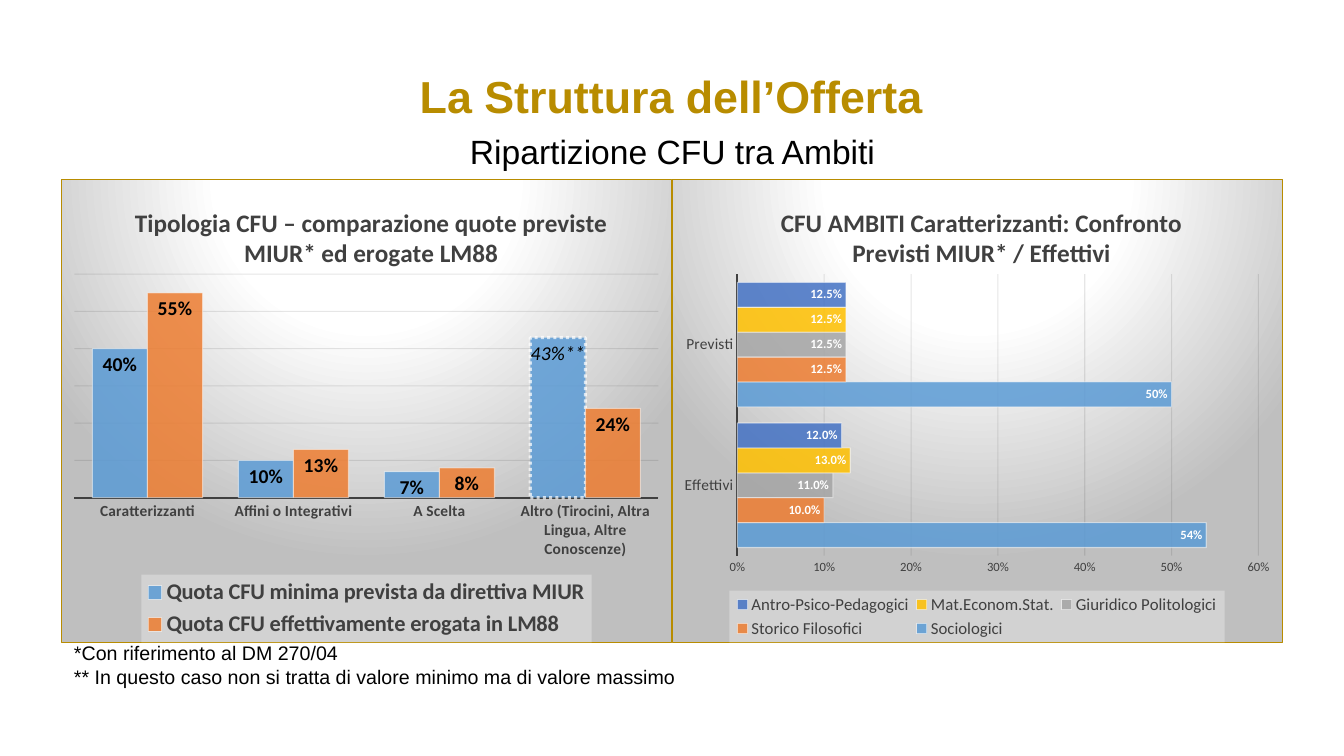
"""Slide comparing planned and actual CFU shares with two charts."""
from lxml import etree
from pptx import Presentation
from pptx.chart.data import CategoryChartData as Data
from pptx.dml.color import RGBColor as RGB
from pptx.enum.chart import XL_CHART_TYPE as Kind, XL_LABEL_POSITION as Spot
from pptx.enum.chart import XL_LEGEND_POSITION as Side, XL_TICK_MARK as Tick
from pptx.enum.dml import MSO_LINE as Dash
from pptx.enum.text import PP_ALIGN as Align
from pptx.oxml.ns import nsdecls, qn
from pptx.util import Pt

INK = {"gold": "B88C00", "black": "000000", "white": "FFFFFF", "dark": "404040",
       "grid": "0D0D0D", "edge": "BFBFBF", "key": "F2F2F2", "blue": "5B9BD5",
       "orange": "ED7D31", "gray": "A5A5A5", "yellow": "FFC000", "navy": "4472C4"}

TEXTS = [
    ((408, 64, 527, 64), ["La Struttura dell’Offerta"], 32, "gold", True, Align.CENTER),
    ((87, 126, 1171, 50), ["Ripartizione CFU tra Ambiti"], 24, "black", False, Align.CENTER),
    ((64, 636, 882, 57), ["*Con riferimento al DM 270/04",
                          "** In questo caso non si tratta di valore minimo ma di valore massimo"],
     14, "black", False, Align.LEFT),
]

CHARTS = [
    dict(kind=Kind.COLUMN_CLUSTERED, box=(61, 179, 611, 464),
         title="Tipologia CFU – comparazione quote previste MIUR* ed erogate LM88",
         head=(130, 200), plot=(74, 274, 585, 224), key=(141, 575, 451, 68),
         cats=["Caratterizzanti", "Affini o Integrativi", "A Scelta",
               "Altro (Tirocini, Altra Lingua, Altre Conoscenze)"],
         rows=[("Quota CFU minima prevista da direttiva MIUR", "blue", "0%", (0.4, 0.1, 0.07, 0.43)),
               ("Quota CFU effettivamente erogata in LM88", "orange", "0%", (0.55, 0.13, 0.08, 0.24))],
         bold=True, label=(14, "black"), legend=16, scale=False),
    dict(kind=Kind.BAR_CLUSTERED, box=(672, 179, 611, 464),
         title="CFU AMBITI Caratterizzanti: Confronto Previsti MIUR* / Effettivi",
         head=(776, 200), plot=(737, 274, 522, 282), key=(729, 591, 496, 52),
         cats=["Effettivi", "Previsti"],
         rows=[("Sociologici", "blue", "0%", (0.54, 0.5)),
               ("Storico Filosofici", "orange", "0.0%", (0.1, 0.125)),
               ("Giuridico Politologici", "gray", "0.0%", (0.11, 0.125)),
               ("Mat.Econom.Stat.", "yellow", "0.0%", (0.13, 0.125)),
               ("Antro-Psico-Pedagogici", "navy", "0.0%", (0.12, 0.125))],
         bold=False, label=(9, "white"), legend=12, scale=True),
]


def px(n):
    return round(n * 914400 / 100.8)


def style(font, size, ink, bold=False, face="Calibri"):
    font.size, font.bold, font.name = Pt(size), bold, face
    font.color.rgb = RGB.from_string(INK[ink])


def stroke(line, ink, width):
    line.color.rgb = RGB.from_string(INK[ink])
    line.width = Pt(width)


def fade(node, *alphas):
    for clr, pct in zip(node.iter(qn("a:srgbClr")), alphas):
        etree.SubElement(clr, qn("a:alpha")).set("val", str(pct * 1000))


def layout(area, box, inner=False):
    left, top, wide, high = box
    spots = [(area[0] - left) / wide, (area[1] - top) / high]
    spots += [n / full for n, full in zip(area[2:], (wide, high))]
    tags = [("layoutTarget", "inner")] if inner else []
    tags += [("xMode", "edge"), ("yMode", "edge")]
    tags += [(tag, round(spot, 4)) for tag, spot in zip("xywh", spots)]
    body = "".join(f'<c:{tag} val="{val}"/>' for tag, val in tags)
    return etree.fromstring(f'<c:layout {nsdecls("c")}><c:manualLayout>{body}</c:manualLayout></c:layout>')


def place(node, area, box, inner=False):
    for old in node.findall(qn("c:layout")):
        node.remove(old)
    mark = node[0] if inner else node.find(qn("c:overlay"))
    mark.addprevious(layout(area, box, inner))


def shape(fill):
    return etree.fromstring(f'<c:spPr {nsdecls("c", "a")}>{fill}</c:spPr>')


def glow():
    stops = "".join(f'<a:gs pos="{pos * 1000}"><a:srgbClr val="{INK[ink]}"/></a:gs>'
                    for pos, ink in ((0, "white"), (39, "white"), (100, "edge")))
    return shape(f'<a:gradFill><a:gsLst>{stops}</a:gsLst><a:path path="circle">'
                 '<a:fillToRect l="50000" t="-80000" r="50000" b="180000"/></a:path></a:gradFill>'
                 f'<a:ln w="9525"><a:solidFill><a:srgbClr val="{INK["gold"]}"/></a:solidFill></a:ln>')


def draw(slide, item):
    data = Data(number_format="0%")
    data.categories = item["cats"]
    for name, ink, fmt, vals in item["rows"]:
        data.add_series(name, vals, fmt)
    box = item["box"]
    chart = slide.shapes.add_chart(item["kind"], *map(px, box), data).chart
    style(chart.font, 10, "black")
    chart._chartSpace.find(qn("c:chart")).addnext(glow())

    chart.has_title = True
    head = chart.chart_title
    head.text_frame.text = item["title"]
    style(head.text_frame.paragraphs[0].font, 18, "dark", True)
    place(head._element, item["head"], box)
    place(chart._chartSpace.find(".//" + qn("c:plotArea")), item["plot"], box, True)

    chart.has_legend = True
    key = chart.legend
    key.position, key.include_in_layout = Side.BOTTOM, False
    style(key.font, item["legend"], "dark", item["bold"])
    place(key._element, item["key"], box)
    pane = shape(f'<a:solidFill><a:srgbClr val="{INK["key"]}"/></a:solidFill>')
    fade(pane, 39)
    key._element.find(qn("c:txPr")).addprevious(pane)

    cat, val = chart.category_axis, chart.value_axis
    for axis in (cat, val):
        axis.major_tick_mark = axis.minor_tick_mark = Tick.NONE
    style(cat.tick_labels.font, 11, "dark", item["bold"])
    stroke(cat.format.line, "dark", 1.5)
    style(val.tick_labels.font, 9, "dark")
    val.tick_labels.number_format, val.tick_labels.number_format_is_linked = "0%", False
    val.minimum_scale, val.maximum_scale, val.major_unit = 0, 0.6, 0.1
    val.format.line.fill.background()
    val.has_major_gridlines = True
    stroke(val.major_gridlines.format.line, "grid", 0.75)
    fade(val.major_gridlines._xAx.find(qn("c:majorGridlines")), 10)
    val.visible = item["scale"]

    plot = chart.plots[0]
    plot.gap_width, plot.overlap, plot.vary_by_categories = 65, 0, False
    for bar, (name, ink, fmt, vals) in zip(plot.series, item["rows"]):
        bar.format.fill.solid()
        bar.format.fill.fore_color.rgb = RGB.from_string(INK[ink])
        stroke(bar.format.line, "white", 0.75)
        fade(bar._element.find(qn("c:spPr")), 85, 50)
        tags = bar.data_labels
        tags.show_value, tags.position = True, Spot.INSIDE_END
        tags.number_format, tags.number_format_is_linked = fmt, False
        style(tags.font, *item["label"], True)
    return chart


def mark(chart):
    bar = chart.plots[0].series[0]
    point = bar.points[3]
    point.format.fill.solid()
    point.format.fill.fore_color.rgb = RGB.from_string(INK["blue"])
    stroke(point.format.line, "white", 2.25)
    point.format.line.dash_style = Dash.ROUND_DOT
    fade(bar._element.find(qn("c:dPt")), 85, 70)
    note = point.data_label
    note.text_frame.text = "43%**"
    font = note.text_frame.paragraphs[0].runs[0].font
    style(font, 14, "black")
    font.italic = True
    note.position = Spot.INSIDE_END


def write(slide, box, lines, size, ink, bold, align):
    frame = slide.shapes.add_textbox(*map(px, box)).text_frame
    frame.word_wrap = True
    frame.text = "\n".join(lines)
    for para in frame.paragraphs:
        para.alignment = align
        style(para.font, size, ink, bold, "Arial")


def main():
    deck = Presentation()
    deck.slide_width, deck.slide_height = px(1344), px(756)
    slide = deck.slides.add_slide(deck.slide_layouts[6])
    for text in TEXTS[:2]:
        write(slide, *text)
    types, areas = [draw(slide, item) for item in CHARTS]
    mark(types)
    write(slide, *TEXTS[2])
    deck.save("out.pptx")


if __name__ == "__main__":
    main()
